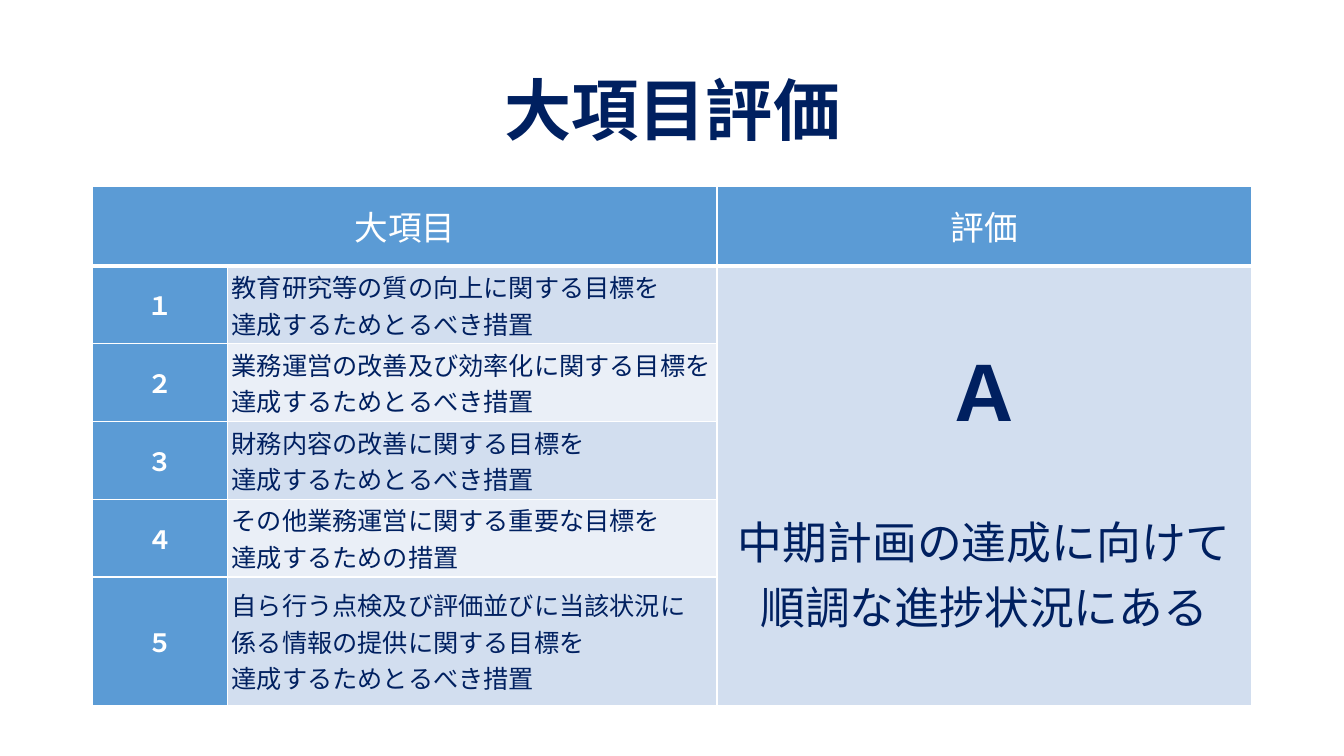
"""Build the slide that rates the five main items of the plan."""
from lxml import etree
from pptx import Presentation
from pptx.dml.color import RGBColor
from pptx.enum.text import MSO_ANCHOR, PP_ALIGN
from pptx.oxml.ns import qn
from pptx.util import Cm, Pt

CENTER, LEFT = PP_ALIGN.CENTER, PP_ALIGN.LEFT
MIDDLE = MSO_ANCHOR.MIDDLE
FONT = "Calibri"
COLORS = {"navy": "002060", "blue": "5B9BD5", "band": "D2DEEF",
          "light": "EAEFF7", "white": "FFFFFF"}
COL_WIDTHS = [3.4, 12.33, 13.48]
ROW_HEIGHTS = [2.0] + [1.96] * 4 + [3.23]
ITEMS = [
    ("１", ["教育研究等の質の向上に関する目標を", "達成するためとるべき措置"]),
    ("２", ["業務運営の改善及び効率化に関する目標を", "達成するためとるべき措置"]),
    ("３", ["財務内容の改善に関する目標を", "達成するためとるべき措置"]),
    ("４", ["その他業務運営に関する重要な目標を", "達成するための措置"]),
    ("５", ["自ら行う点検及び評価並びに当該状況に", "係る情報の提供に関する目標を",
           "達成するためとるべき措置"]),
]


def rgb(name):
    return RGBColor.from_string(COLORS[name])


def write_lines(tf, lines, size, color, bold=False, align=CENTER):
    """Write one paragraph per line, reusing the empty first one."""
    for line in lines:
        p = tf.paragraphs[0] if not tf.text else tf.add_paragraph()
        p.text = line
        p.alignment = align
        p.font.name = FONT
        p.font.size = Pt(size)
        p.font.bold = bold
        p.font.color.rgb = rgb(color)


def add_title(s, text):
    tf = s.shapes.add_textbox(Cm(2.34), Cm(1.02), Cm(29.21), Cm(3.68)).text_frame
    tf.word_wrap = True
    tf.vertical_anchor = MIDDLE
    write_lines(tf, [text], 48, "navy", bold=True)
    tf.paragraphs[0].line_spacing = 0.9


def set_border(cell, side, width):
    tc_pr = cell._tc.get_or_add_tcPr()
    ln = etree.SubElement(tc_pr, qn(f"a:ln{side}"), w=str(Pt(width)))
    fill = etree.SubElement(ln, qn("a:solidFill"))
    etree.SubElement(fill, qn("a:srgbClr"), val=COLORS["white"])


def style_cell(cell, row, fill):
    """Give a cell its margins, white borders and fill."""
    cell.margin_left = cell.margin_right = Cm(0.1)
    cell.margin_top = cell.margin_bottom = 0
    cell.vertical_anchor = MIDDLE
    widths = {"L": 1, "R": 1, "T": 3 if row == 1 else 1, "B": 3 if row == 0 else 1}
    for side, width in widths.items():
        set_border(cell, side, width)
    cell.fill.solid()
    cell.fill.fore_color.rgb = rgb(fill)


def add_table(s):
    """Add the styled, merged and still empty table."""
    table = s.shapes.add_table(len(ROW_HEIGHTS), len(COL_WIDTHS), Cm(2.34), Cm(4.7),
                               Cm(sum(COL_WIDTHS)), Cm(sum(ROW_HEIGHTS))).table
    table.first_row = table.horz_banding = False
    for column, width in zip(table.columns, COL_WIDTHS):
        column.width = Cm(width)
    for i, height in enumerate(ROW_HEIGHTS):
        table.rows[i].height = Cm(height)
        item_fill = "band" if i % 2 else "light"
        fills = ["blue", item_fill, "band"] if i else ["blue"] * 3
        for j, fill in enumerate(fills):
            style_cell(table.cell(i, j), i, fill)
    table.cell(0, 0).merge(table.cell(0, 1))
    table.cell(1, 2).merge(table.cell(len(ITEMS), 2))
    return table


def fill_table(table):
    """Write the headings, the items and the overall rating."""
    for col, heading in ((0, "大項目"), (2, "評価")):
        write_lines(table.cell(0, col).text_frame, [heading], 24, "white")
    for i, (number, lines) in enumerate(ITEMS, start=1):
        write_lines(table.cell(i, 0).text_frame, [number], 18, "white", bold=True)
        write_lines(table.cell(i, 1).text_frame, lines, 18, "navy", align=LEFT)
    rating = table.cell(1, 2).text_frame
    write_lines(rating, ["Ａ"], 54, "navy", bold=True)
    rating.paragraphs[0].space_after = Pt(46)
    write_lines(rating, ["中期計画の達成に向けて", "順調な進捗状況にある"], 32, "navy")


def main():
    prs = Presentation()
    prs.slide_width, prs.slide_height = Cm(33.87), Cm(19.05)
    s = prs.slides.add_slide(prs.slide_layouts[6])
    add_title(s, "大項目評価")
    fill_table(add_table(s))
    prs.save("out.pptx")


if __name__ == "__main__":
    main()
